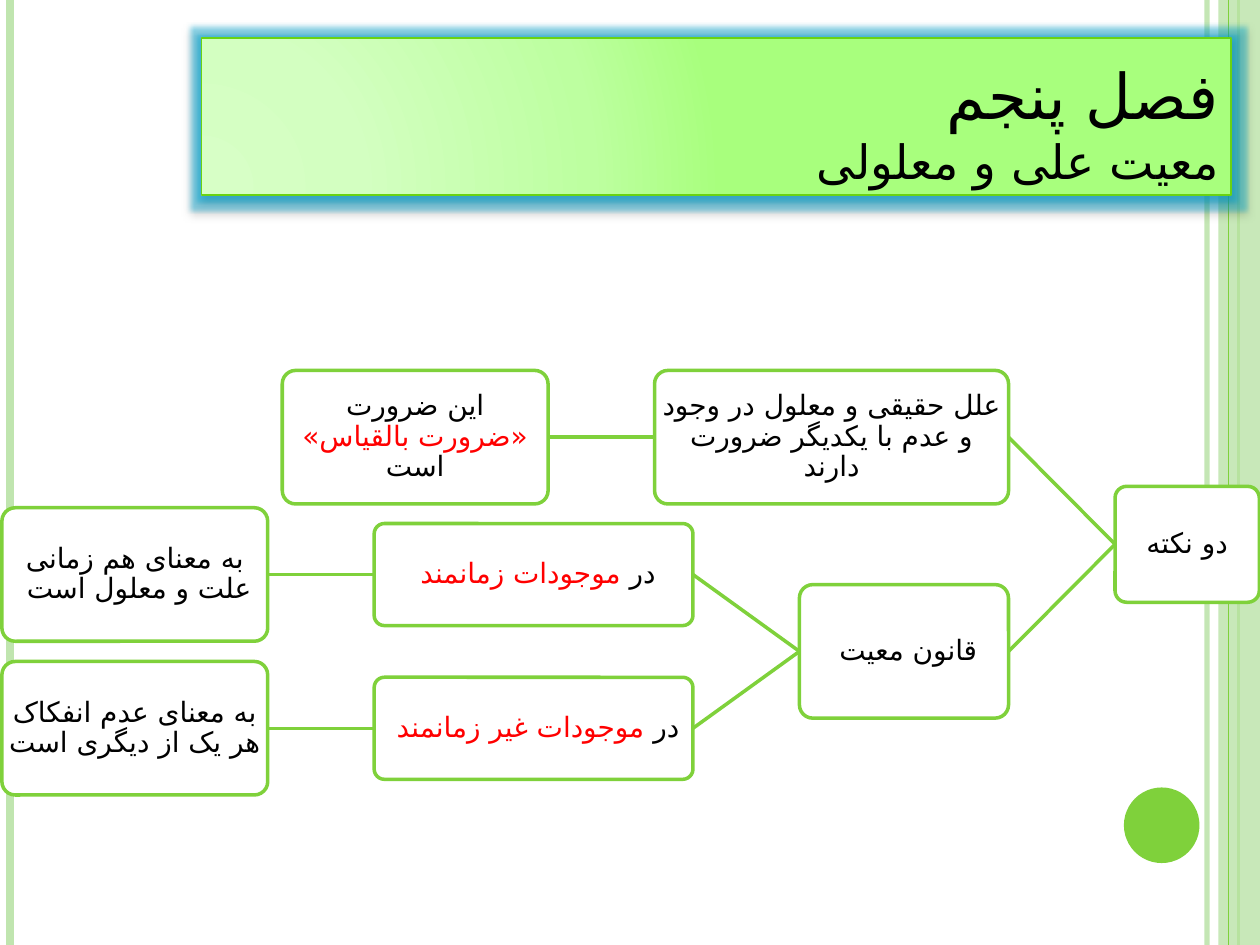
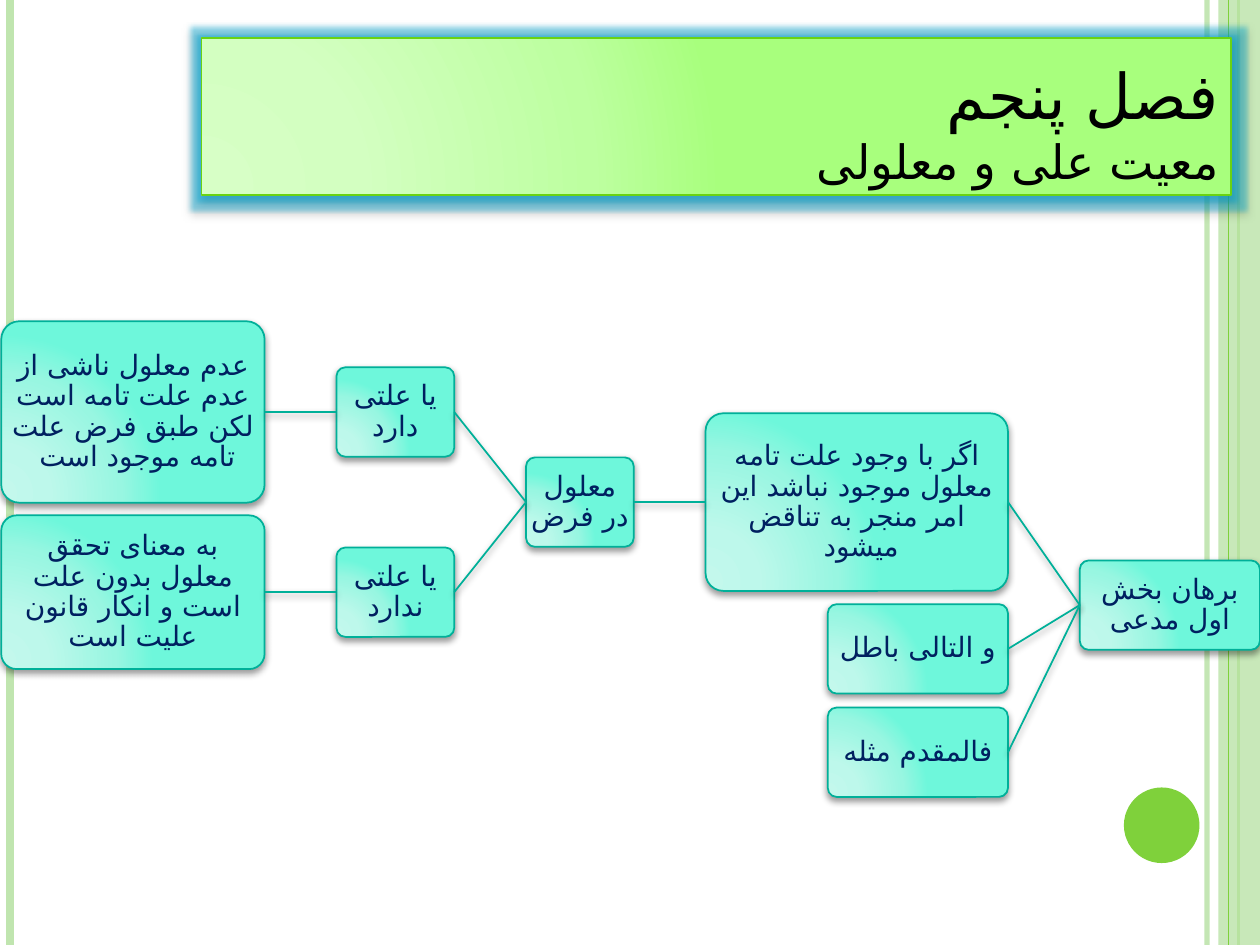
from dataclasses import dataclass

from pptx import Presentation, util as u
from pptx.dml.color import RGBColor
from pptx.enum import shapes, text
from pptx.oxml import parse_xml
from pptx.oxml.ns import nsdecls, qn

WIDTH, HEIGHT = u.Inches(10), u.Inches(7.5)
COLUMN, ROW = WIDTH / 100, HEIGHT / 75
FONT, PERSIAN_FONT = "TeX Gyre Schola", "DejaVu Sans"
GREEN, PALE_GREEN, BLACK, RED, NAVY = "7FD13B", "C0E5AF", "000000", "FF0000", "002060"
TITLE_FILL = ("D7FFC6", "D3FFC1", "BDFFA0", "A8FF7D")
TEAL_FILL = ("C3F8EC", "BDF8EB", "98F6E1", "6EF7DB")
GRADIENT_STOPS = (0, 30, 75, 100)
SHADOW = ('<a:outerShdw blurRad="50800" dist="25400" dir="5400000" rotWithShape="0">'
          '<a:srgbClr val="000000"><a:alpha val="40000"/></a:srgbClr></a:outerShdw>')
GLOW = ('<a:glow rad="63500"><a:srgbClr val="00ADDC"><a:alpha val="40000"/>'
        '</a:srgbClr></a:glow>')


@dataclass
class Box:
    """A region in grid columns and rows."""
    left: float
    top: float
    width: float
    height: float

    def lengths(self):
        """Return the region in slide units."""
        return (round(self.left * COLUMN), round(self.top * ROW),
                round(self.width * COLUMN), round(self.height * ROW))


@dataclass
class Style:
    """The look of one tree."""
    fill: object
    line: str
    weight: float
    ink: str
    effects: str
    gap: float


@dataclass
class Node:
    """A tree box; a leaf names its middle row within the diagram."""
    runs: list
    width: float
    height: float
    children: tuple = ()
    row: float = 0

    def middle(self):
        """Return the middle row, centred on the extent of the children."""
        if not self.children:
            return self.row
        return (min(child.middle() - child.height / 2 for child in self.children)
                + max(child.middle() + child.height / 2 for child in self.children)) / 2


def color(value):
    """Turn a hex string into a colour."""
    return RGBColor.from_string(value)


def set_alpha(shape, percent):
    """Make the first solid colour of a shape partly transparent."""
    solid = shape._element.spPr.find(".//" + qn("a:srgbClr"))
    solid.append(parse_xml(f'<a:alpha {nsdecls("a")} val="{percent * 1000}"/>'))


def set_effects(shape, effects=""):
    """Replace the theme's effects by the given ones."""
    shape._element.spPr.append(
        parse_xml(f'<a:effectLst {nsdecls("a")}>{effects}</a:effectLst>'))


def set_line(shape, value, weight):
    """Colour an outline or a connector."""
    shape.line.color.rgb = color(value)
    shape.line.width = u.Pt(weight)


def set_gradient(shape, values):
    """Fill a shape with a gradient that is lightest at the lower left."""
    stops = "".join(f'<a:gs pos="{stop * 1000}"><a:srgbClr val="{value}"/></a:gs>'
                    for stop, value in zip(GRADIENT_STOPS, values))
    shape._element.spPr.find(qn("a:prstGeom")).addnext(parse_xml(
        f'<a:gradFill {nsdecls("a")} rotWithShape="1"><a:gsLst>{stops}</a:gsLst>'
        '<a:path path="circle"><a:fillToRect l="5000" t="100000" r="120000" b="10000"/>'
        '</a:path></a:gradFill>'))


def add_box(slide, kind, box, fill, line=None, weight=1, effects=""):
    """Add a preset shape with a solid or gradient fill."""
    shape = slide.shapes.add_shape(kind, *box.lengths())
    if isinstance(fill, tuple):
        set_gradient(shape, fill)
    else:
        shape.fill.solid()
        shape.fill.fore_color.rgb = color(fill)
    if line:
        set_line(shape, line, weight)
    else:
        shape.line.fill.background()
    set_effects(shape, effects)
    return shape


def add_line(slide, start, end, value, weight, effects=""):
    """Add a straight connector between two points in slide units."""
    connector = slide.shapes.add_connector(shapes.MSO_CONNECTOR.STRAIGHT, *start, *end)
    set_line(connector, value, weight)
    set_effects(connector, effects)
    return connector


def start_paragraph(shape, alignment, anchor):
    """Prepare a right-to-left paragraph."""
    frame = shape.text_frame
    frame.word_wrap = True
    frame.vertical_anchor = anchor
    paragraph = frame.paragraphs[0]
    paragraph.alignment = alignment
    paragraph._p.get_or_add_pPr().set("rtl", "1")
    return paragraph


def add_run(paragraph, words, size, value):
    """Add one run in the deck's fonts."""
    run = paragraph.add_run()
    run.text = words
    run.font.name = FONT
    run.font.size = u.Pt(size)
    run.font.color.rgb = color(value)
    run._r.rPr.append(parse_xml(f'<a:cs {nsdecls("a")} typeface="{PERSIAN_FONT}"/>'))


def add_frame(slide, box):
    """Draw the side bands and the dot."""
    left, top, width, height = box.lengths()

    def rule(share, value, weight):
        """Draw a full-height line at a share of the width."""
        place = round(left + width * share / 100)
        return add_line(slide, (place, top), (place, top + height), value, weight)

    set_alpha(rule(95.8, PALE_GREEN, 3), 93)
    rule(0.8, PALE_GREEN, 4.5)
    rule(98.3, GREEN, 1.5)
    band = add_box(slide, shapes.MSO_SHAPE.RECTANGLE,
                   Box(box.left + box.width * 0.967, box.top, box.width * 0.033, box.height),
                   PALE_GREEN)
    set_alpha(band, 87)
    rule(97.5, GREEN, 0.75)
    add_box(slide, shapes.MSO_SHAPE.OVAL,
            Box(box.left + 89.2, box.top + 62.5, 6, 6), GREEN)


def add_title(slide, box, heading, subheading):
    """Draw the glowing title panel."""
    panel = add_box(slide, shapes.MSO_SHAPE.RECTANGLE, box, TITLE_FILL, "6AD312", 1,
                    GLOW + SHADOW)
    paragraph = start_paragraph(panel, text.PP_ALIGN.RIGHT, text.MSO_ANCHOR.BOTTOM)
    add_run(paragraph, heading, 36, BLACK)
    paragraph.add_line_break()
    add_run(paragraph, subheading, 27, BLACK)


def add_node(slide, node, right, top, style):
    """Draw a node, then its children to the left, and return its shape."""
    left = right - node.width
    shape = add_box(slide, shapes.MSO_SHAPE.ROUNDED_RECTANGLE,
                    Box(left, top + node.middle() - node.height / 2, node.width, node.height),
                    style.fill, style.line, style.weight, style.effects)
    shape.adjustments[0] = 0.1
    frame = shape.text_frame
    frame.margin_left = frame.margin_right = u.Inches(0.01)
    frame.margin_top = frame.margin_bottom = u.Inches(0.01)
    paragraph = start_paragraph(shape, text.PP_ALIGN.CENTER, text.MSO_ANCHOR.MIDDLE)
    paragraph.line_spacing = 0.9
    for words, value in node.runs:
        add_run(paragraph, words, 16, value or style.ink)
    for child in node.children:
        child_shape = add_node(slide, child, left - style.gap, top, style)
        link = add_line(slide, (0, 0), (0, 0), style.line, style.weight, style.effects)
        link.begin_connect(shape, 1)
        link.end_connect(child_shape, 3)
    return shape


def add_tree(slide, box, root, style):
    """Draw a tree that grows leftwards from the right side of its box."""
    add_node(slide, root, box.left + box.width, box.top, style)


def plain(words, *size, **options):
    """Make a node whose text has one colour."""
    return Node([(words, None)], *size, **options)


def two_points():
    """Return the tree of the two points."""
    necessity = Node([("این ضرورت ", None), ("«ضرورت بالقیاس»", RED), (" است", None)],
                     21.1, 10.6, row=5.3)
    causes = plain("علل حقیقی و معلول در وجود و عدم با یکدیگر ضرورت دارند",
                   28.1, 10.6, (necessity,))
    cases = (("موجودات زمانمند ", "به معنای هم زمانی علت و معلول است ", 16.2),
             ("موجودات غیر زمانمند ", "به معنای عدم انفکاک هر یک از دیگری است", 28.4))
    beings = tuple(Node([("در ", None), (being, RED)], 25.3, 8.1,
                        (plain(meaning, 21.1, 10.6, row=row),))
                   for being, meaning, row in cases)
    law = plain("قانون معیت ", 16.6, 10.6, beings)
    return plain("دو نکته", 11.45, 9.2, (causes, law))


def first_proof():
    """Return the tree of the proof."""
    cases = (("یا علتی دارد",
              "عدم معلول ناشی از عدم علت تامه است لکن طبق فرض علت تامه موجود است ", 14.4, 7.2),
             ("یا علتی ندارد",
              "به معنای تحقق معلول بدون علت است و انکار قانون علیت است", 12.2, 21.5))
    options = tuple(plain(option, 9.35, 7.1, (plain(result, 20.9, height, row=row),))
                    for option, result, height, row in cases)
    effect = plain("معلول در فرض", 8.55, 7.1, options)
    premise = plain("اگر با وجود علت تامه معلول موجود نباشد این امر منجر به تناقض میشود ",
                    24, 14.1, (effect,))
    steps = tuple(plain(step, 14.3, 7.1, row=row)
                  for step, row in (("و التالی باطل", 26), ("فالمقدم مثله", 34.2)))
    return plain("برهان بخش اول مدعی", 14.3, 7.1, (premise, *steps))


def main():
    """Build and save the deck."""
    presentation = Presentation()
    presentation.slide_width, presentation.slide_height = WIDTH, HEIGHT
    outlined = Style("FFFFFF", GREEN, 2, BLACK, "", 8.45)
    glossy = Style(TEAL_FILL, "00B099", 1, NAVY, SHADOW, 5.7)
    diagrams = ((Box(0.15, 29.4, 99.8, 33.7), two_points(), outlined),
                (Box(0.1, 25.5, 99.9, 37.7), first_proof(), glossy))
    for box, root, style in diagrams:
        slide = presentation.slides.add_slide(presentation.slide_layouts[6])
        add_frame(slide, Box(0, 0, 100, 75))
        add_title(slide, Box(16, 3, 81.7, 12.5), "فصل پنجم", "معیت علی و معلولی")
        add_tree(slide, box, root, style)
    presentation.save("out.pptx")


if __name__ == "__main__":
    main()
